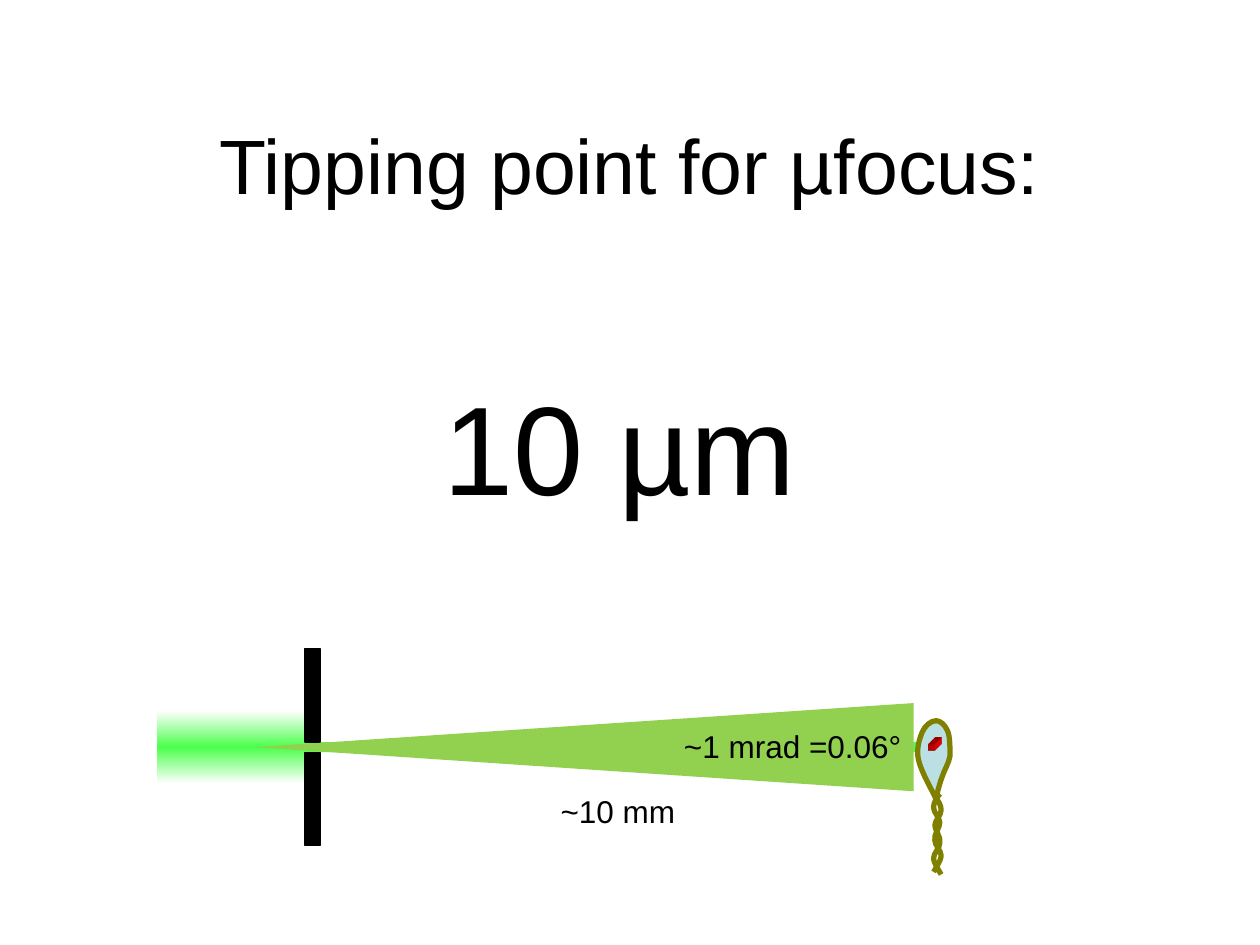
from copy import deepcopy

from lxml.etree import SubElement
from pptx import Presentation
from pptx.dml.color import RGBColor
from pptx.enum.shapes import MSO_SHAPE as Shape
from pptx.enum.text import MSO_ANCHOR as Anchor, MSO_AUTO_SIZE as AutoSize, PP_ALIGN as Align
from pptx.oxml.ns import qn
from pptx.util import Inches, Pt

COLORS = {
    "ink": "000000",
    "paper": "FFFFFF",
    "beam": "4BFF4B",
    "cone": "92D050",
    "drop": "BBE0E3",
    "fiber": "808000",
    "crystal": "FF0000",
}

# Curves: a start point, then Bezier pieces of two controls and an end
LOOP = [(7.44, 6.36),
        (7.38, 6.24), (7.31, 6.12), (7.29, 6.03),
        (7.27, 5.94), (7.3, 5.86), (7.32, 5.81),
        (7.34, 5.76), (7.39, 5.72), (7.43, 5.72),
        (7.46, 5.72), (7.5, 5.75), (7.52, 5.8),
        (7.54, 5.84), (7.54, 5.94), (7.54, 6),
        (7.53, 6.06), (7.5, 6.1), (7.48, 6.16),
        (7.46, 6.21), (7.44, 6.29), (7.43, 6.33),
        (7.43, 6.37), (7.43, 6.37), (7.43, 6.38)]
STRAND = [(7.42, 6.32),
          (7.45, 6.36), (7.47, 6.39), (7.47, 6.43),
          (7.47, 6.47), (7.42, 6.51), (7.42, 6.55),
          (7.42, 6.59), (7.47, 6.64), (7.46, 6.69),
          (7.46, 6.73), (7.41, 6.77), (7.41, 6.81),
          (7.41, 6.85), (7.46, 6.92), (7.47, 6.94)]
# The second strand mirrors the first and sits slightly higher
MIRROR_STRAND = [(14.88 - x, y - 0.02) for x, y in STRAND]


def rgb(name):
    return RGBColor.from_string(COLORS[name])


def paint(shape, fill=None, line=None, width=0.75):
    shape.shadow.inherit = False
    if fill:
        shape.fill.solid()
        shape.fill.fore_color.rgb = rgb(fill)
    else:
        shape.fill.background()
    if line:
        shape.line.color.rgb = rgb(line)
        shape.line.width = Pt(width)
    else:
        shape.line.fill.background()


def add_block(slide, box, kind=Shape.RECTANGLE, rotation=0, **style):
    block = slide.shapes.add_shape(kind, *map(Inches, box))
    block.rotation = rotation
    paint(block, **style)
    return block


def add_curve(slide, points, **style):
    start, *rest = [(Inches(x), Inches(y)) for x, y in points]
    builder = slide.shapes.build_freeform(*start, scale=1.0)
    builder.add_line_segments(rest, close=False)
    curve = builder.convert_to_shape()
    # Every three line segments become one Bezier piece
    segments = list(curve._element.iter(qn("a:lnTo")))
    outline = segments[0].getparent()
    for i in range(0, len(segments), 3):
        piece = SubElement(outline, qn("a:cubicBezTo"))
        for segment in segments[i:i + 3]:
            piece.append(segment[0])
            outline.remove(segment)
    paint(curve, **style)


def extrude(shape, depth, color):
    properties = shape._element.spPr
    scene = SubElement(properties, qn("a:scene3d"))
    SubElement(scene, qn("a:camera"), prst="legacyObliqueTopRight")
    SubElement(scene, qn("a:lightRig"), rig="legacyFlat3", dir="b")
    solid = SubElement(properties, qn("a:sp3d"), extrusionH=str(Inches(depth)),
                       prstMaterial="legacyMatte")
    side = SubElement(solid, qn("a:extrusionClr"))
    SubElement(side, qn("a:srgbClr"), val=COLORS[color])


def fade_edges(shape, edge, middle):
    shape.fill.gradient()
    shape.fill.gradient_angle = 90
    stop_list = shape.fill.gradient_stops[0]._gs.getparent()
    stop_list.append(deepcopy(stop_list.findall(qn("a:gs"))[-1]))
    for stop, position, color in zip(shape.fill.gradient_stops, (0, 0.5, 1), (edge, middle, edge)):
        stop.position = position
        stop.color.rgb = rgb(color)


def add_text(slide, text, box, size=18, align=Align.LEFT, anchor=Anchor.TOP,
             wrap=False, auto_size=AutoSize.SHAPE_TO_FIT_TEXT):
    frame = slide.shapes.add_textbox(*map(Inches, box)).text_frame
    frame.word_wrap = wrap
    frame.auto_size = auto_size
    frame.vertical_anchor = anchor
    paragraph = frame.paragraphs[0]
    paragraph.alignment = align
    run = paragraph.add_run()
    run.text = text
    run.font.name = "Arial"
    run.font.size = Pt(size)
    run.font.color.rgb = rgb("ink")


def add_sample(slide):
    # Loop holding the drop, with the crystal inside
    add_curve(slide, LOOP, fill="drop", line="fiber", width=3)
    crystal = add_block(slide, (7.37, 5.91, 0.05, 0.05), fill="crystal")
    extrude(crystal, depth=0.15, color="crystal")
    # Twisted stem
    for strand in (STRAND, MIRROR_STRAND):
        add_curve(slide, strand, line="fiber", width=3)


def main():
    prs = Presentation()
    prs.slide_width, prs.slide_height = Inches(10), Inches(7.5)
    slide = prs.slides.add_slide(prs.slide_layouts[6])

    # Headline and answer
    add_text(slide, "Tipping point for µfocus:", (0.75, 0.67, 8.5, 1.25), size=44,
             align=Align.CENTER, anchor=Anchor.MIDDLE, wrap=True, auto_size=AutoSize.NONE)
    add_text(slide, "10 µm", (3.42, 2.88, 4.32, 1.31), size=72, wrap=True)

    # Beam through the aperture to the sample
    add_block(slide, (2.34, 5.89, 5.08, 0.08), fill="beam")
    incoming = add_block(slide, (1.25, 5.64, 1.17, 0.58))
    fade_edges(incoming, edge="paper", middle="beam")
    add_sample(slide)
    for blade_top in (5.97, 5.15):
        add_block(slide, (2.42, blade_top, 0.12, 0.74), fill="ink", line="ink")

    # Divergence cone and its labels
    add_text(slide, "~10 mm", (4.35, 6.24, 1.12, 0.4))
    add_block(slide, (4.29, 3.32, 0.7, 5.22), kind=Shape.ISOSCELES_TRIANGLE,
              rotation=270, fill="cone")
    add_text(slide, "~1 mrad =0.06°", (5.33, 5.72, 1.94, 0.4))

    prs.save("out.pptx")


if __name__ == "__main__":
    main()
